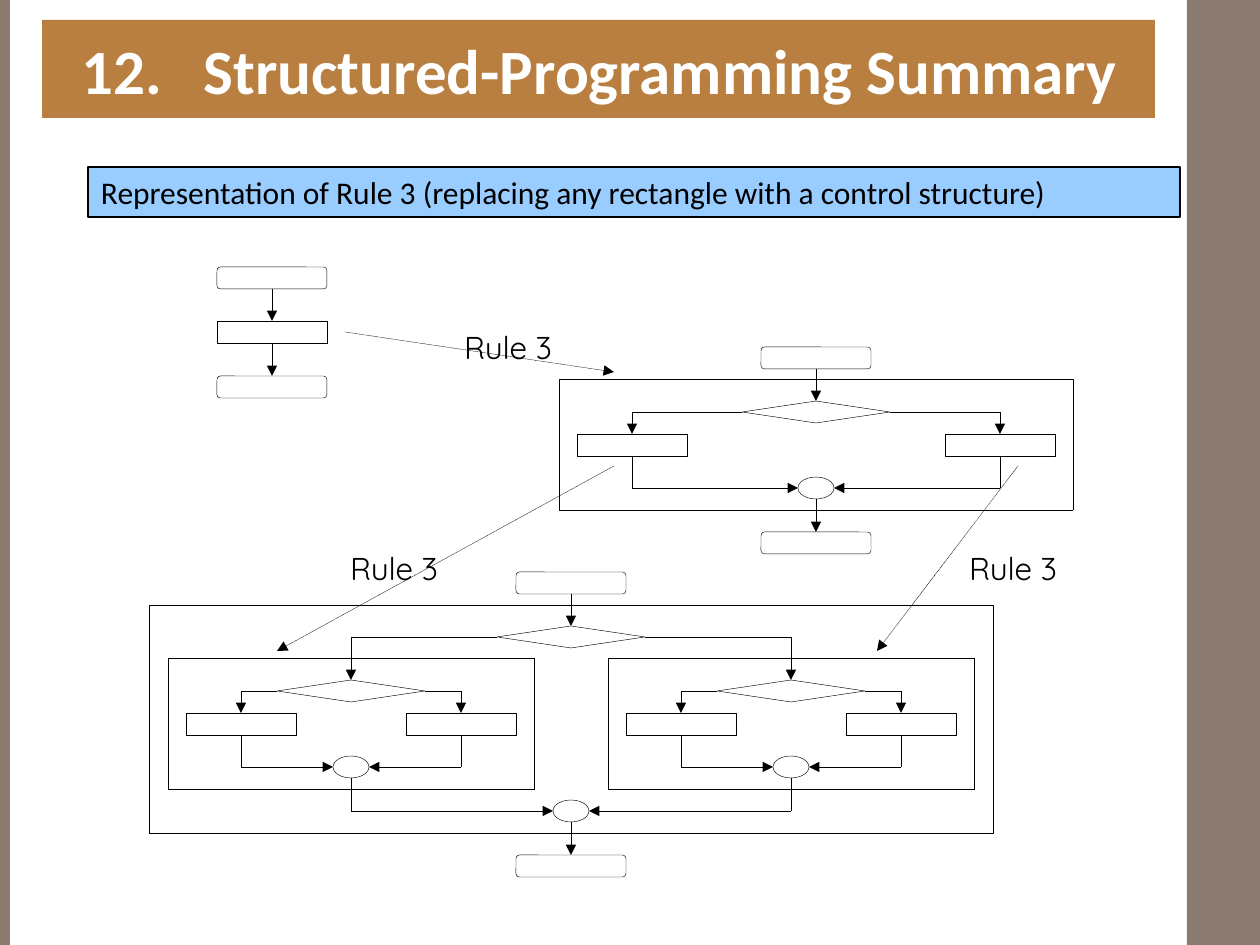
import pptx
import pptx.util
import pptx.dml.color
import pptx.enum.dml
import pptx.enum.shapes
import pptx.enum.text
import pptx.oxml
import pptx.oxml.ns
from lxml import etree

RGBColor = pptx.dml.color.RGBColor
BLACK = RGBColor(0x00, 0x00, 0x00)
WHITE = RGBColor(0xFF, 0xFF, 0xFF)
TAUPE = RGBColor(0x8C, 0x7B, 0x70)
BRONZE = RGBColor(0xB8, 0x7F, 0x40)
SKY = RGBColor(0x99, 0xCC, 0xFF)

SHAPE = pptx.enum.shapes.MSO_SHAPE
ANCHOR = pptx.enum.text.MSO_ANCHOR
TOP, LEFT, BOTTOM, RIGHT = range(4)
BOX_WIDTH, DIAMOND_WIDTH, JUNCTION_WIDTH = 110, 148, 36
HEIGHT = 22
HALF = HEIGHT // 2


def emu(px):
    return pptx.util.Emu(round(px * 914400 / 126))


class FlowSlide:
    line_width = 0.25

    def __init__(self, slide):
        self.slide = slide

    def shape(self, kind, left, top, width, height, fill=None, line=BLACK, line_width=line_width):
        shape = self.slide.shapes.add_shape(kind, emu(left), emu(top), emu(width), emu(height))
        shape.shadow.inherit = False
        if fill is None:
            shape.fill.background()
        else:
            shape.fill.solid()
            shape.fill.fore_color.rgb = fill
        if line is None:
            shape.line.fill.background()
        else:
            shape.line.color.rgb = line
            shape.line.width = pptx.util.Pt(line_width)
        return shape

    def set_text(self, shape, text, size, font, color, inset=0, bold=False, anchor=ANCHOR.MIDDLE, tab=None):
        frame = shape.text_frame
        frame.text = text
        frame.word_wrap = True
        frame.vertical_anchor = anchor
        frame.margin_left = emu(inset)
        frame.margin_right = frame.margin_top = frame.margin_bottom = 0
        paragraph = frame.paragraphs[0]
        paragraph.alignment = pptx.enum.text.PP_ALIGN.LEFT
        if tab:
            tabs = etree.SubElement(paragraph._p.get_or_add_pPr(), pptx.oxml.ns.qn("a:tabLst"))
            etree.SubElement(tabs, pptx.oxml.ns.qn("a:tab"), pos=str(emu(tab)), algn="l")
        for run in paragraph.runs:
            run.font.size = pptx.util.Pt(size)
            run.font.name = font
            run.font.bold = bold
            run.font.color.rgb = color

    def label(self, text, left, top):
        box = self.slide.shapes.add_textbox(emu(left), emu(top), emu(94), emu(HEIGHT))
        self.set_text(box, text, 18, "Quicksand", BLACK, anchor=ANCHOR.TOP)

    def line(self, start, end, arrow=True, begin=None, finish=None, dotted=False):
        """Draw a line; begin and finish are optional (shape, site) joins."""
        connector = self.slide.shapes.add_connector(
            pptx.enum.shapes.MSO_CONNECTOR.STRAIGHT, *map(emu, (*start, *end)))
        if begin:
            connector.begin_connect(*begin)
        if finish:
            connector.end_connect(*finish)
        connector.line.color.rgb = BLACK
        connector.line.width = pptx.util.Pt(self.line_width)
        if dotted:
            connector.line.dash_style = pptx.enum.dml.MSO_LINE.ROUND_DOT
        if arrow:
            etree.SubElement(connector.line._get_or_add_ln(), pptx.oxml.ns.qn("a:tailEnd"), type="triangle")
        etree.SubElement(connector._element.spPr, pptx.oxml.ns.qn("a:effectLst"))

    def node(self, kind, center, top, width=BOX_WIDTH, fill=None):
        return self.shape(kind, center - width // 2, top, width, HEIGHT, fill)

    def terminal(self, center, top):
        return self.node(SHAPE.ROUNDED_RECTANGLE, center, top)

    def frame(self, center, top, half_width, height):
        frame = self.shape(SHAPE.RECTANGLE, center - half_width, top, 2 * half_width, height)
        frame.line.dash_style = pptx.enum.dml.MSO_LINE.ROUND_DOT

    def box_pair(self, center, top, spread):
        return [self.node(SHAPE.RECTANGLE, center + side * spread, top) for side in (-1, 1)]

    def selection(self, center, top, spread, entries, entry_top, exit_bottom, junction_top, exits=None):
        """Link a decision to its two branches and bring them to a junction."""
        decision = self.node(SHAPE.DIAMOND, center, top, DIAMOND_WIDTH, WHITE)
        self.node(SHAPE.OVAL, center, junction_top, JUNCTION_WIDTH)
        branch_y, join_y = top + HALF, junction_top + HALF
        exits = exits or [None, None]
        for side, site, entry, leaving in zip((-1, 1), (LEFT, RIGHT), entries, exits):
            x = center + side * spread
            self.line((center + side * DIAMOND_WIDTH // 2, branch_y), (x, branch_y),
                      arrow=False, begin=(decision, site))
            self.line((x, branch_y), (x, entry_top), finish=(entry, TOP))
            self.line((x, exit_bottom), (x, join_y), arrow=False,
                      begin=leaving and (leaving, BOTTOM))
            self.line((x, join_y), (center + side * JUNCTION_WIDTH // 2, join_y))
        return decision

    def simple_selection(self, center, top, spread):
        boxes = self.box_pair(center, top + 33, spread)
        decision = self.selection(center, top, spread, boxes, top + 33, top + 55, top + 76, boxes)
        self.frame(center, top - HEIGHT, spread + 73, 131)
        return decision

    def start_and_end(self, center, decision, decision_top, junction_bottom):
        start = self.terminal(center, decision_top - 54)
        self.line((center, decision_top - 32), (center, decision_top),
                  begin=(start, BOTTOM), finish=(decision, TOP))
        end = self.terminal(center, junction_bottom + 33)
        self.line((center, junction_bottom), (center, junction_bottom + 33), finish=(end, TOP))


def main():
    presentation = pptx.Presentation()
    presentation.slide_width, presentation.slide_height = emu(1260), emu(945)
    flow = FlowSlide(presentation.slides.add_slide(presentation.slide_layouts[6]))

    # Side bands, title and heading
    for left, width in ((1187, 73), (0, 10)):
        flow.shape(SHAPE.RECTANGLE, left, 0, width, 945, TAUPE, None)
    title = flow.shape(SHAPE.RECTANGLE, 42, 20, 1113, 98, BRONZE, None)
    flow.set_text(title, "12.\tStructured-Programming Summary", 36, "Calibri", WHITE,
                  inset=40, bold=True, tab=122)
    heading = flow.shape(SHAPE.RECTANGLE, 88, 167, 1092, 50, SKY, line_width=0.75)
    flow.set_text(heading, "Representation of Rule 3 (replacing any rectangle with a control structure)",
                  18, "Calibri", BLACK, inset=13)

    # Simplest flowchart
    center = 272
    start = flow.terminal(center, 267)
    action = flow.node(SHAPE.RECTANGLE, center, 321)
    end = flow.terminal(center, 376)
    flow.line((center, 289), (center, 321), begin=(start, BOTTOM), finish=(action, TOP))
    flow.line((center, 343), (center, 376), begin=(action, BOTTOM), finish=(end, TOP))

    # Rectangle replaced by a selection
    decision = flow.simple_selection(816, 401, 184)
    flow.start_and_end(816, decision, 401, 499)

    # Both branches replaced by selections
    center, spread = 571, 220
    inner = [flow.simple_selection(center + side * spread, 680, 110) for side in (-1, 1)]
    decision = flow.selection(center, 626, spread, inner, 680, 778, 800)
    flow.start_and_end(center, decision, 626, 822)
    flow.frame(center, 605, 422, 228)

    # Rule arrows and their labels
    for start, end, label in (((345, 332), (614, 372), (464, 328)),
                              ((1018, 466), (877, 651), (969, 549)),
                              ((614, 466), (277, 651), (350, 549))):
        flow.line(start, end, dotted=True)
        flow.label("Rule 3", *label)

    presentation.save("out.pptx")


if __name__ == "__main__":
    main()
